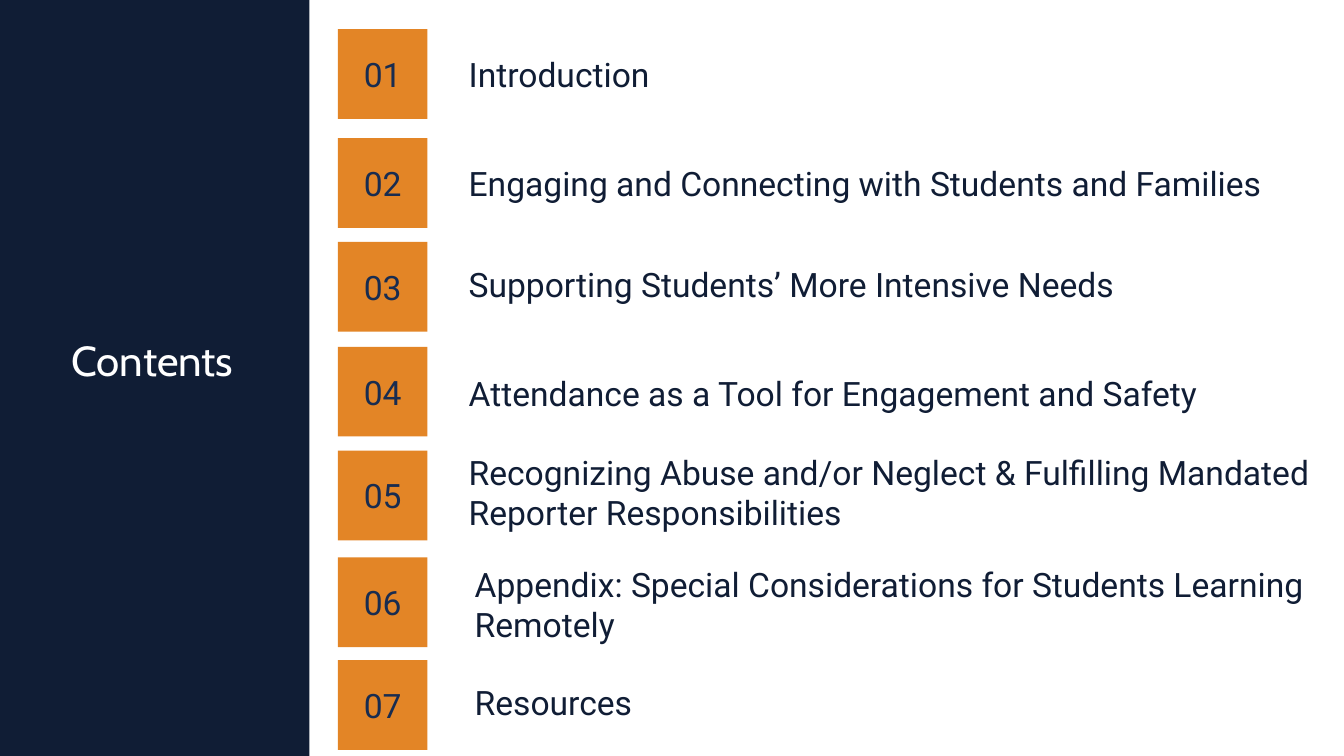
from dataclasses import dataclass

from pptx import Presentation
from pptx import util as u
from pptx.dml.color import RGBColor
from pptx.enum import shapes, text


@dataclass(frozen=True)
class Theme:
    navy: str = "101D35"
    ink: str = "182C50"
    gold: str = "E38526"
    white: str = "FFFFFF"
    head: str = "Cabin"
    body: str = "Roboto"
    big: int = 30
    mid: int = 24


@dataclass(frozen=True)
class Box:
    """A place on the grid, in columns and rows."""
    left: float
    top: float
    wide: float
    high: float

    def span(self) -> tuple[int, int, int, int]:
        return tuple(u.Inches(n * CELL) for n in
                     (self.left, self.top, self.wide, self.high))


@dataclass(frozen=True)
class Item:
    """A contents line; nudge moves the pair, drop moves only the label."""
    name: str
    nudge: float = 0
    drop: float = 0
    left: float = 45.5
    wide: float = 84.6
    high: float = 8.9


CELL = 0.1
COLS, ROWS = 133.3, 75
FIRST, PITCH = 3.1, 10.4
SIDE, TILE = 33.5, 8.9
THEME = Theme()
ITEMS = [
    Item("Introduction", -0.2),
    Item("Engaging and Connecting with Students and Families", 0.2),
    Item("Supporting Students’ More Intensive Needs", 0.1, -0.3),
    Item("Attendance as a Tool for Engagement and Safety", 0.1, 0.1, wide=85.2),
    Item("Recognizing Abuse and/or Neglect & Fulfilling Mandated "
         "Reporter Responsibilities", wide=87.3, high=8.3),
    Item("Appendix: Special Considerations for Students Learning Remotely",
         0.2, 0.5, 46.1, 86.1, 8.3),
    Item("Resources", left=46.1, wide=86.7, high=8.3),
]


def write(shape, words: str, *, font: str = THEME.body, size: int = THEME.mid,
          color: str = THEME.navy, align=text.PP_ALIGN.LEFT,
          space: float = 1) -> None:
    frame = shape.text_frame
    frame.word_wrap = True
    frame.auto_size = text.MSO_AUTO_SIZE.NONE
    frame.vertical_anchor = text.MSO_ANCHOR.MIDDLE
    para = frame.paragraphs[0]
    para.alignment = align
    para.line_spacing = space
    run = para.add_run()
    run.text = words
    run.font.name = font
    run.font.size = u.Pt(size)
    run.font.color.rgb = RGBColor.from_string(color)


def block(home, box: Box, color: str):
    """Add a plain filled rectangle to a slide's or group's shapes."""
    shape = home.add_shape(shapes.MSO_SHAPE.RECTANGLE, *box.span())
    shape.shadow.inherit = False
    shape.fill.solid()
    shape.fill.fore_color.rgb = RGBColor.from_string(color)
    shape.line.fill.background()
    return shape


def entry(slide, row: int, item: Item) -> None:
    """Draw a numbered tile and its label as one group."""
    home = slide.shapes.add_group_shape().shapes
    top = FIRST + row * PITCH + item.nudge
    tile = block(home, Box(SIDE, top, TILE, TILE), THEME.gold)
    write(tile, f"{row + 1:02}", color=THEME.ink, align=text.PP_ALIGN.CENTER)
    place = Box(item.left, top + item.drop, item.wide, item.high)
    write(home.add_textbox(*place.span()), item.name)


def main() -> None:
    deck = Presentation()
    deck.slide_width = u.Inches(COLS * CELL)
    deck.slide_height = u.Inches(ROWS * CELL)
    slide = deck.slides.add_slide(deck.slide_layouts[5])

    title = slide.shapes.title
    title.left, title.top, title.width, title.height = Box(
        6.1, 28.8, 19.7, 14.5).span()
    write(title, "Contents", font=THEME.head, size=THEME.big,
          color=THEME.white, space=0.9)
    panel = block(slide.shapes, Box(0, 0, 30.7, ROWS), THEME.navy)
    title.element.addprevious(panel.element)

    for row, item in enumerate(ITEMS):
        entry(slide, row, item)
    deck.save("out.pptx")


if __name__ == "__main__":
    main()
